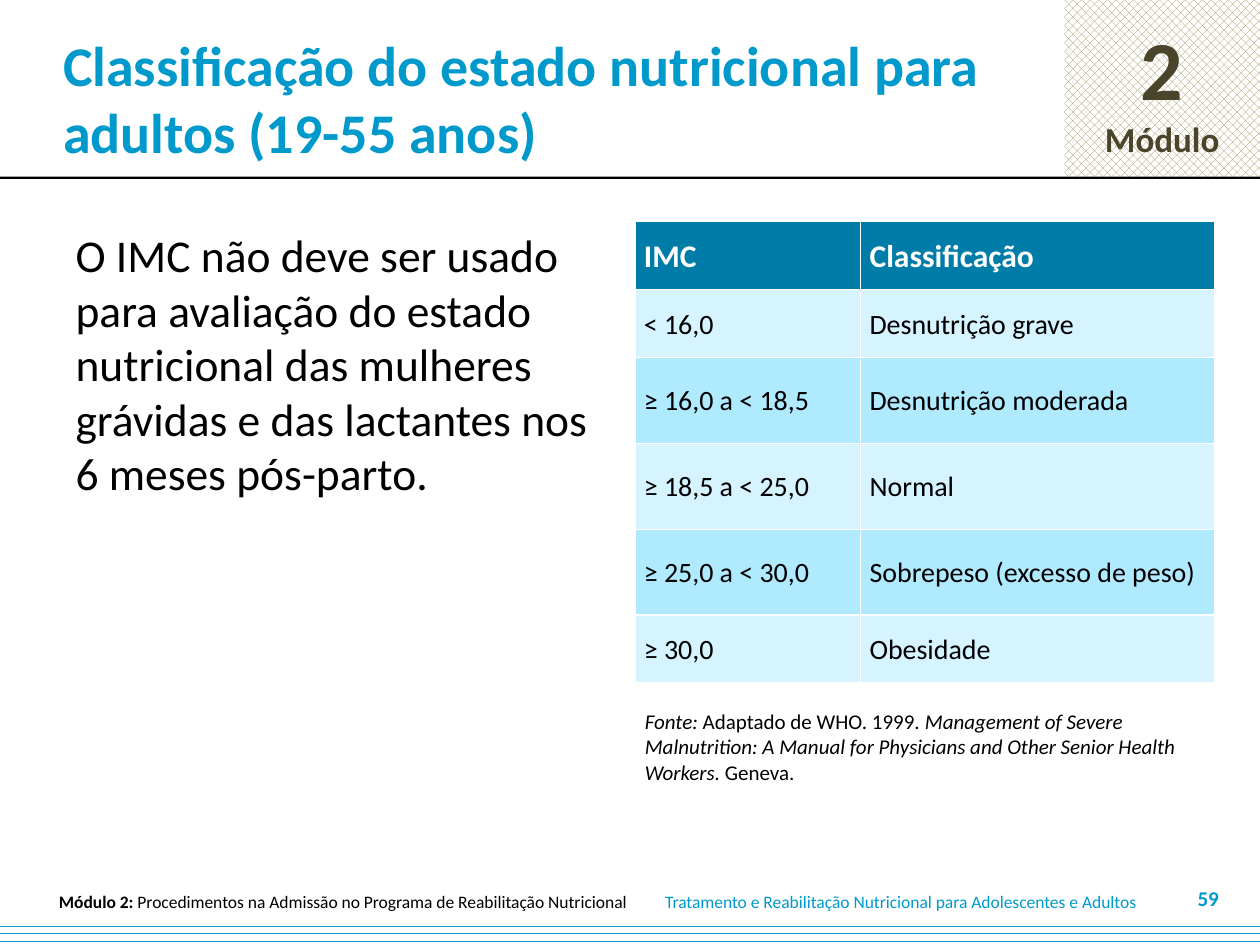
from lxml import etree
from pptx import Presentation
from pptx.dml.color import RGBColor
from pptx.enum.dml import MSO_PATTERN
from pptx.enum.shapes import MSO_SHAPE
from pptx.enum.text import MSO_ANCHOR, MSO_AUTO_SIZE, PP_ALIGN
from pptx.oxml.ns import qn
from pptx.util import Cm, Pt

RECT = MSO_SHAPE.RECTANGLE
MIDDLE, TOP = MSO_ANCHOR.MIDDLE, MSO_ANCHOR.TOP
LEFT, CENTER, RIGHT = PP_ALIGN.LEFT, PP_ALIGN.CENTER, PP_ALIGN.RIGHT
JUSTIFY = PP_ALIGN.JUSTIFY
HATCH, DASHES = MSO_PATTERN.PERCENT_50, MSO_PATTERN.DASHED_HORIZONTAL

FONT = "Calibri"
BLACK = RGBColor(0x00, 0x00, 0x00)
WHITE = RGBColor(0xFF, 0xFF, 0xFF)
BLUE = RGBColor(0x00, 0x99, 0xCC)
KHAKI = RGBColor(0x94, 0x8A, 0x54)
BROWN = RGBColor(0x4A, 0x45, 0x2A)
HEADER_BLUE = RGBColor(0x00, 0x7C, 0xA8)
BAND_COLORS = RGBColor(0xD5, 0xF4, 0xFF), RGBColor(0xAF, 0xEA, 0xFF)

TABLE_ROWS = [
    ("IMC", "Classificação"),
    ("< 16,0", "Desnutrição grave"),
    ("≥ 16,0 a < 18,5", "Desnutrição moderada"),
    ("≥ 18,5 a < 25,0", "Normal"),
    ("≥ 25,0 a < 30,0", "Sobrepeso (excesso de peso)"),
    ("≥ 30,0", "Obesidade"),
]
COL_WIDTHS = 4.55, 7.13
ROW_HEIGHTS = 1.37, 1.37, 1.73, 1.73, 1.73, 1.37


def format_run(r, size, color, bold=False, italic=False):
    f = r.font
    f.name, f.size, f.bold, f.italic = FONT, Pt(size), bold, italic
    f.color.rgb = color


def add_runs(p, parts, size, color):
    """Add (text, bold, italic) parts to a paragraph."""
    for text, bold, italic in parts:
        r = p.add_run()
        r.text = text
        format_run(r, size, color, bold, italic)


def add_bar(s, left, top, width, height, color, pattern=None):
    """Add a borderless rectangle, solid or patterned on white."""
    sp = s.shapes.add_shape(RECT, Cm(left), Cm(top), Cm(width), Cm(height))
    sp.shadow.inherit = False
    sp.line.fill.background()
    if pattern is None:
        sp.fill.solid()
        sp.fill.fore_color.rgb = color
    else:
        sp.fill.patterned()
        sp.fill.pattern = pattern
        sp.fill.fore_color.rgb = color
        sp.fill.back_color.rgb = WHITE
    return sp


def add_module_badge(s):
    tf = add_bar(s, 21.46, 0, 3.94, 3.56, KHAKI, HATCH).text_frame
    tf.vertical_anchor = MIDDLE
    tf.text = "2\nMódulo"
    for p, size in zip(tf.paragraphs, (48, 20)):
        p.alignment = CENTER
        format_run(p.runs[0], size, BROWN, bold=True)


def add_text(s, left, top, width, height, parts, size, color, align=LEFT, wrap=True):
    sp = s.shapes.add_textbox(Cm(left), Cm(top), Cm(width), Cm(height))
    tf = sp.text_frame
    tf.word_wrap = wrap
    tf.vertical_anchor = MIDDLE
    p = tf.paragraphs[0]
    p.alignment = align
    add_runs(p, parts, size, color)


def fill_placeholder(sp, left, top, width, height, text, size, color, anchor, bold=False):
    sp.left, sp.top, sp.width, sp.height = Cm(left), Cm(top), Cm(width), Cm(height)
    tf = sp.text_frame
    tf.text = text
    tf.word_wrap = True
    tf.auto_size = MSO_AUTO_SIZE.NONE
    tf.vertical_anchor = anchor
    p = tf.paragraphs[0]
    p.alignment = LEFT
    p.space_before = Pt(0)
    format_run(p.runs[0], size, color, bold)
    return tf


def remove_bullet(p):
    pPr = p._p.get_or_add_pPr()
    pPr.set("marL", "0")
    pPr.set("indent", "0")
    etree.SubElement(pPr, qn("a:buNone"))


def set_borders(cell, color):
    """Draw 1 pt lines on all sides; they must precede the cell's fill."""
    tcPr = cell._tc.get_or_add_tcPr()
    for i, side in enumerate(("a:lnL", "a:lnR", "a:lnT", "a:lnB")):
        ln = etree.Element(qn(side), w=str(Pt(1)))
        fill = etree.SubElement(ln, qn("a:solidFill"))
        etree.SubElement(fill, qn("a:srgbClr"), val=str(color))
        tcPr.insert(i, ln)


def format_cell(cell, text, fill, size, color, bold):
    cell.text = text
    cell.vertical_anchor = MIDDLE
    cell.margin_left = cell.margin_right = Cm(0.18)
    cell.margin_top = cell.margin_bottom = 0
    cell.fill.solid()
    cell.fill.fore_color.rgb = fill
    set_borders(cell, WHITE)
    p = cell.text_frame.paragraphs[0]
    p.alignment = JUSTIFY
    p.line_spacing = 1.05
    format_run(p.runs[0], size, color, bold)


def add_bmi_table(s):
    table = s.shapes.add_table(len(TABLE_ROWS), len(COL_WIDTHS), Cm(12.8), Cm(4.47),
                               Cm(sum(COL_WIDTHS)), Cm(sum(ROW_HEIGHTS))).table
    for col, width in zip(table.columns, COL_WIDTHS):
        col.width = Cm(width)
    for i, (row, height) in enumerate(zip(table.rows, ROW_HEIGHTS)):
        row.height = Cm(height)
        if i == 0:
            style = HEADER_BLUE, 18, WHITE, True
        else:
            style = BAND_COLORS[(i - 1) % 2], 16, BLACK, False
        for cell, text in zip(row.cells, TABLE_ROWS[i]):
            format_cell(cell, text, *style)


def add_footer(s):
    add_bar(s, 0, 18.52, 25.4, 0.53, BLUE, DASHES)
    add_text(s, 13.16, 17.91, 10.29, 0.51,
             [("Tratamento e Reabilitação Nutricional para Adolescentes e Adultos", False, False)],
             10, BLUE, wrap=False)
    add_text(s, 0.74, 17.91, 12.34, 0.51,
             [("Módulo 2: ", True, False),
              ("Procedimentos na Admissão no Programa de Reabilitação Nutricional", False, False)],
             10, BLACK, CENTER, wrap=False)
    add_text(s, 23.55, 17.78, 1.27, 0.64, [("59", True, False)], 12, BLUE, RIGHT)


def main():
    prs = Presentation()
    prs.slide_width, prs.slide_height = Cm(25.4), Cm(19.05)
    s = prs.slides.add_slide(prs.slide_layouts[1])

    title = fill_placeholder(s.shapes.title, 0, 0, 21.79, 3.94,
                             "Classificação do estado nutricional para adultos (19-55 anos)",
                             32, BLUE, MIDDLE, bold=True)
    title.margin_left = Cm(1.27)
    body = fill_placeholder(s.placeholders[1], 1.27, 4.45, 10.97, 12.57,
                            "O IMC não deve ser usado para avaliação do estado nutricional das "
                            "mulheres grávidas e das lactantes nos 6 meses pós-parto.",
                            26, BLACK, TOP)
    body.paragraphs[0].space_after = Pt(10)
    remove_bullet(body.paragraphs[0])

    add_module_badge(s)
    add_bar(s, 0, 3.56, 25.4, 0.05, BLACK)
    add_bmi_table(s)
    add_text(s, 12.75, 14.15, 11.4, 1.8,
             [("Fonte: ", False, True),
              ("Adaptado de WHO. 1999. ", False, False),
              ("Management of Severe Malnutrition: A Manual for Physicians "
               "and Other Senior Health Workers.", False, True),
              (" Geneva.", False, False)],
             12, BLACK)
    add_footer(s)
    prs.save("out.pptx")


if __name__ == "__main__":
    main()
